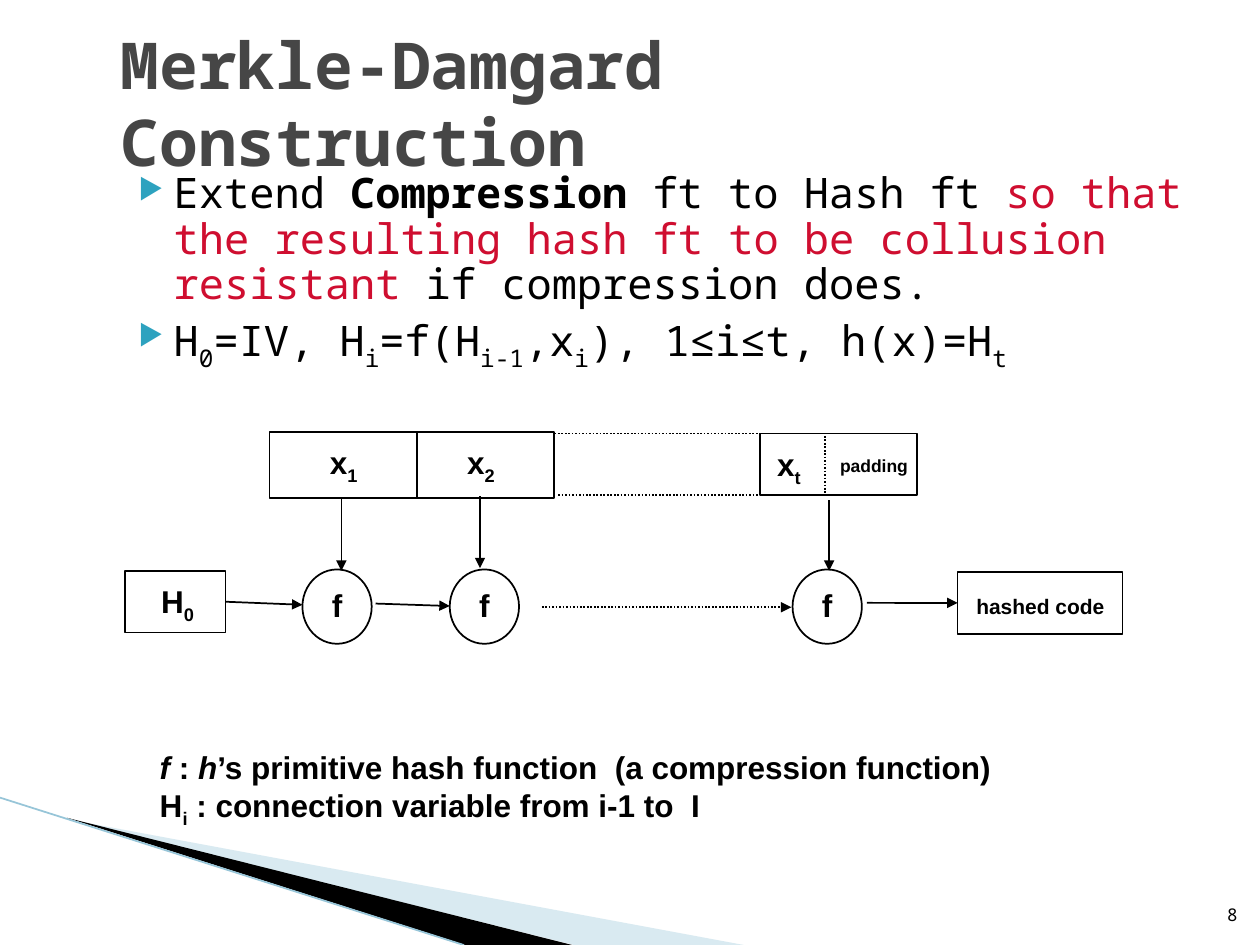
"""Build the Merkle-Damgard construction slide."""
from dataclasses import dataclass
from typing import NamedTuple

from lxml.etree import SubElement
from pptx import Presentation
from pptx.dml.color import RGBColor as Rgb
from pptx.enum.dml import MSO_LINE as Dash
from pptx.enum.shapes import MSO_CONNECTOR as Conn, MSO_SHAPE as Kind
from pptx.enum.text import MSO_ANCHOR as Anchor, PP_ALIGN as Align
from pptx.oxml.ns import qn
from pptx.util import Pt

HUES = {"ink": "000000", "title": "464646", "red": "CF0E30",
        "mark": "2DA2BF", "pale": "A0CBDC", "edge": "97C5D8"}
MONO, SANS = "Noto Sans Mono", "Arial"


class Run(NamedTuple):
    text: str
    bold: bool = False
    slant: bool = False
    sub: bool = False
    hue: str = "ink"


@dataclass
class Text:
    box: tuple[float, float, float, float]
    paras: list[list[Run]]
    size: float
    font: str = SANS
    wrap: bool = False
    mark: bool = False
    anchor: Anchor = Anchor.TOP
    align: Align = Align.LEFT


@dataclass
class Box:
    name: str
    kind: Kind
    box: tuple[float, float, float, float]


@dataclass
class Wire:
    ends: tuple[float, float, float, float]
    head: bool = False
    dots: bool = False
    hue: str = "ink"
    start: str = ""
    stop: str = ""


def rgb(hue: str) -> Rgb:
    """Return a named colour."""
    return Rgb.from_string(HUES[hue])


def add_mark(para) -> None:
    """Give a paragraph a hanging triangle bullet."""
    props = para._p.get_or_add_pPr()
    props.set("marL", str(Pt(28.8)))
    props.set("indent", str(-Pt(20.2)))
    hue = SubElement(props, qn("a:buClr"))
    SubElement(hue, qn("a:srgbClr"), val=HUES["mark"])
    SubElement(props, qn("a:buSzPct"), val="68000")
    SubElement(props, qn("a:buChar"), char="▶")
    para.line_spacing = 0.9


def add_text(slide, item: Text) -> None:
    """Write a text box run by run."""
    frame = slide.shapes.add_textbox(*map(Pt, item.box)).text_frame
    frame.word_wrap = item.wrap
    frame.vertical_anchor = item.anchor
    for num, runs in enumerate(item.paras):
        para = frame.add_paragraph() if num else frame.paragraphs[0]
        para.alignment = item.align
        if item.mark:
            add_mark(para)
            if num:
                para.space_before = Pt(4)
        for part in runs:
            run = para.add_run()
            run.text = part.text
            font = run.font
            font.name, font.size = item.font, Pt(item.size)
            font.bold, font.italic = part.bold, part.slant
            font.color.rgb = rgb(part.hue)
            if part.sub:
                run._r.get_or_add_rPr().set("baseline", "-25000")


def add_box(slide, item: Box):
    """Draw an unfilled outline and return it."""
    shape = slide.shapes.add_shape(item.kind, *map(Pt, item.box))
    shape.shadow.inherit = False
    shape.fill.background()
    shape.line.color.rgb = rgb("ink")
    shape.line.width = Pt(1)
    return shape


def add_wire(slide, item: Wire, boxes: dict) -> None:
    """Draw a straight line, joined to boxes where named."""
    wire = slide.shapes.add_connector(Conn.STRAIGHT, *map(Pt, item.ends))
    if item.start:
        wire.begin_connect(boxes[item.start], 3)
    if item.stop:
        wire.end_connect(boxes[item.stop], 1)
    wire.line.color.rgb = rgb(item.hue)
    wire.line.width = Pt(1)
    if item.dots:
        wire.line.dash_style = Dash.ROUND_DOT
    props = wire.element.spPr
    if item.head:
        SubElement(props.find(qn("a:ln")), qn("a:tailEnd"), type="triangle")
    SubElement(props, qn("a:effectLst"))


def add_wedge(slide, spots: list[tuple[float, float]], hue: str, alpha: int) -> None:
    """Draw a filled corner wedge."""
    first, *rest = [(Pt(x), Pt(y)) for x, y in spots]
    pen = slide.shapes.build_freeform(*first, scale=1.0)
    pen.add_line_segments(rest, close=True)
    shape = pen.convert_to_shape()
    shape.shadow.inherit = False
    shape.line.fill.background()
    shape.fill.solid()
    shape.fill.fore_color.rgb = rgb(hue)
    if alpha < 100:
        tone = shape.element.spPr.find(qn("a:solidFill"))[0]
        SubElement(tone, qn("a:alpha"), val=str(alpha * 1000))


def label(x: float, y: float, wide: float, text: str, sub: str = "",
          size: float = 18, high: float = 28.8) -> Text:
    """Return a bold diagram label with an optional subscript."""
    runs = [Run(text, True)] + ([Run(sub, True, sub=True)] if sub else [])
    return Text((x, y, wide, high), [runs], size)


ROUNDS = (172.8, 257, 452.9)
BOXES = [
    Box("blocks", Kind.RECTANGLE, (154.1, 247, 162.7, 37.4)),
    Box("last", Kind.RECTANGLE, (434.2, 247.7, 90, 35.3)),
    Box("seed", Kind.RECTANGLE, (71.3, 326.2, 57.6, 35.3)),
    Box("code", Kind.RECTANGLE, (547.2, 326.9, 94.3, 35.3)),
] + [Box(f"f{num}", Kind.OVAL, (x, 325.4, 39.6, 42.5))
     for num, x in enumerate(ROUNDS)]
WIRES = [
    Wire((128.9, 343.8, 172.8, 345.6), head=True, start="seed"),
    Wire((214.6, 344.9, 257, 346.3), head=True),
    Wire((309.6, 347, 452.2, 347), head=True, dots=True),
    Wire((495.4, 344.5, 547.2, 344.5), head=True, stop="code"),
    Wire((238.3, 247, 238.3, 284.4)),
    Wire((316.8, 247.7, 434.9, 247.7), dots=True),
    Wire((319, 283, 435.6, 283), dots=True),
    Wire((471.6, 249.1, 471.6, 282.2), dots=True),
] + [Wire((x, top, x, end), head=True) for x, top, end in
     ((195.1, 285.1, 326.2), (274.3, 283.7, 324.7), (473.8, 285.8, 326.2))]
LABELS = [
    label(85, 329, 33.8, "H", "0"),
    label(181.4, 249.8, 31, "x", "1"),
    label(259.9, 249.8, 31, "x", "2"),
    label(437, 250.6, 28.8, "x", "t"),
    label(473, 256.3, 53.3, "padding", size=10, high=19.4),
    label(550.8, 335.5, 87.8, "hashed code", size=12, high=21.6),
] + [label(x + 9.7, 331.2, 20.2, "f") for x in ROUNDS]
FORMULA = [Run(text, sub=num % 2 == 1) for num, text in enumerate(
    ("H", "0", "=IV, H", "i", "=f(H", "i-1", ",x", "i", "), 1≤i≤t, h(x)=H", "t"))]
CLAIM = [Run("Extend "), Run("Compression", True), Run(" ft to Hash ft "),
         Run("so that the resulting hash ft to be collusion resistant", hue="red"),
         Run(" if compression does.")]
NOTES = [
    [Run("f", True, True), Run(" : ", True), Run("h", True, True),
     Run("’s primitive hash function  (a compression function)", True)],
    [Run("H", True), Run("i", True, sub=True),
     Run(" : connection variable from i-1 to  I", True)],
]
TEXTS = [
    Text((63.4, 95, 621, 126.7), [CLAIM, FORMULA], 24, MONO, True, True),
    Text((669.6, 503.3, 44.6, 28.8), [[Run("8")]], 10, MONO, True,
         anchor=Anchor.BOTTOM, align=Align.RIGHT),
    Text((61.9, 36, 577.4, 44.6),
         [[Run("Merkle-Damgard Construction", True, hue="title")]],
         36.9, MONO, True, anchor=Anchor.MIDDLE),
    *LABELS,
    Text((84.2, 424.1, 490.3, 50.4), NOTES, 18),
]


def main() -> None:
    """Build and save the slide."""
    deck = Presentation()
    deck.slide_width, deck.slide_height = Pt(720), Pt(540)
    slide = deck.slides.add_slide(deck.slide_layouts[6])
    add_wedge(slide, [(39.6, 468.4), (425, 540), (328, 540)], "pale", 40)
    add_wedge(slide, [(38.2, 467.3), (327, 540), (266, 540)], "ink", 100)
    add_wire(slide, Wire((0, 455.8, 265, 540), hue="edge"), {})
    boxes = {item.name: add_box(slide, item) for item in BOXES}
    for item in WIRES:
        add_wire(slide, item, boxes)
    for item in TEXTS:
        add_text(slide, item)
    deck.save("out.pptx")


if __name__ == "__main__":
    main()
